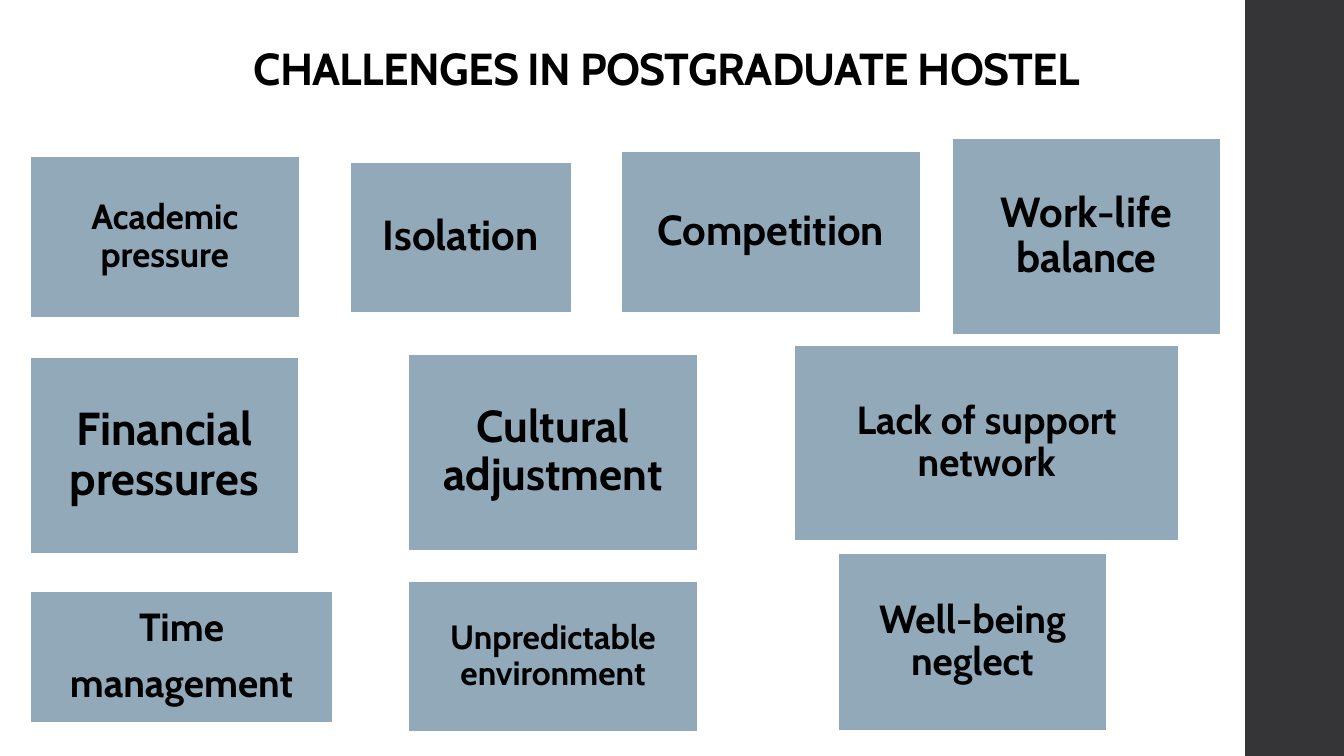
from dataclasses import dataclass

import pptx
import pptx.dml.color
import pptx.enum.shapes
import pptx.enum.text
import pptx.util

RGBColor = pptx.dml.color.RGBColor
BLACK = RGBColor(0x00, 0x00, 0x00)
WHITE = RGBColor(0xFF, 0xFF, 0xFF)
CHARCOAL = RGBColor(0x35, 0x35, 0x37)
STEEL = RGBColor(0x92, 0xA9, 0xB9)

FONT = "Cabin"
EMU_PER_PX = 9144  # 100 px to the inch
SLIDE_W, SLIDE_H = 1333, 750
BAND_LEFT = 1235


@dataclass(frozen=True)
class Box:
    left: int
    top: int
    width: int
    height: int


@dataclass(frozen=True)
class Challenge:
    text: str  # one paragraph per line
    box: Box
    size: int
    inset: int


CHALLENGES = [
    # Top row
    Challenge("Academic pressure", Box(30, 155, 267, 160), 25, 10),
    Challenge("Isolation", Box(347, 161, 220, 149), 30, 12),
    Challenge("Competition", Box(616, 150, 297, 160), 30, 12),
    Challenge("Work-life balance", Box(944, 137, 267, 195), 30, 12),
    # Middle row
    Challenge("Financial pressures", Box(30, 354, 266, 195), 33, 14),
    Challenge("Cultural adjustment", Box(405, 351, 287, 195), 32, 14),
    Challenge("Lack of support network", Box(788, 342, 381, 195), 28, 15),
    # Bottom row
    Challenge("Time\nmanagement", Box(30, 587, 300, 130), 28, 15),
    Challenge("Unpredictable environment", Box(405, 577, 287, 149), 24, 21),
    Challenge("Well-being neglect", Box(831, 549, 267, 176), 28, 27),
]


def px(n: int) -> pptx.util.Emu:
    return pptx.util.Emu(n * EMU_PER_PX)


def place(box: Box) -> tuple:
    return px(box.left), px(box.top), px(box.width), px(box.height)


def style_paragraph(p, size: int) -> None:
    p.alignment = pptx.enum.text.PP_ALIGN.CENTER
    p.line_spacing = 0.9
    p.font.name = FONT
    p.font.size = pptx.util.Pt(size)
    p.font.bold = True
    p.font.color.rgb = BLACK


def add_rect(s, box: Box, fill: RGBColor):
    sp = s.shapes.add_shape(pptx.enum.shapes.MSO_SHAPE.RECTANGLE, *place(box))
    sp.shadow.inherit = False
    sp.fill.solid()
    sp.fill.fore_color.rgb = fill
    sp.line.fill.background()
    return sp


def add_title(s, text: str, box: Box, size: int) -> None:
    tf = s.shapes.add_textbox(*place(box)).text_frame
    tf.word_wrap = True
    tf.vertical_anchor = pptx.enum.text.MSO_ANCHOR.BOTTOM
    p = tf.paragraphs[0]
    r = p.add_run()
    r.text = text
    style_paragraph(p, size)
    r.font._element.set("spc", "-50")  # tightened letter spacing


def add_challenge(s, challenge: Challenge) -> None:
    sp = add_rect(s, challenge.box, STEEL)
    sp.line.color.rgb = WHITE
    sp.line.width = pptx.util.Pt(1.1)
    tf = sp.text_frame
    tf.word_wrap = True
    tf.vertical_anchor = pptx.enum.text.MSO_ANCHOR.MIDDLE
    tf.margin_left = tf.margin_right = px(challenge.inset)
    tf.margin_top = tf.margin_bottom = px(challenge.inset)
    tf.text = challenge.text
    for p in tf.paragraphs:
        style_paragraph(p, challenge.size)
        p.space_after = pptx.util.Pt(0.35 * challenge.size)


def main() -> None:
    prs = pptx.Presentation()
    prs.slide_width, prs.slide_height = px(SLIDE_W), px(SLIDE_H)
    s = prs.slides.add_slide(prs.slide_layouts[6])

    # Side band and title
    add_rect(s, Box(BAND_LEFT, 0, SLIDE_W - BAND_LEFT, SLIDE_H), CHARCOAL)
    add_title(s, "CHALLENGES IN POSTGRADUATE HOSTEL ", Box(91, 27, 1150, 72), 32)

    # Challenge tiles
    for challenge in CHALLENGES:
        add_challenge(s, challenge)

    prs.save("out.pptx")


if __name__ == "__main__":
    main()
